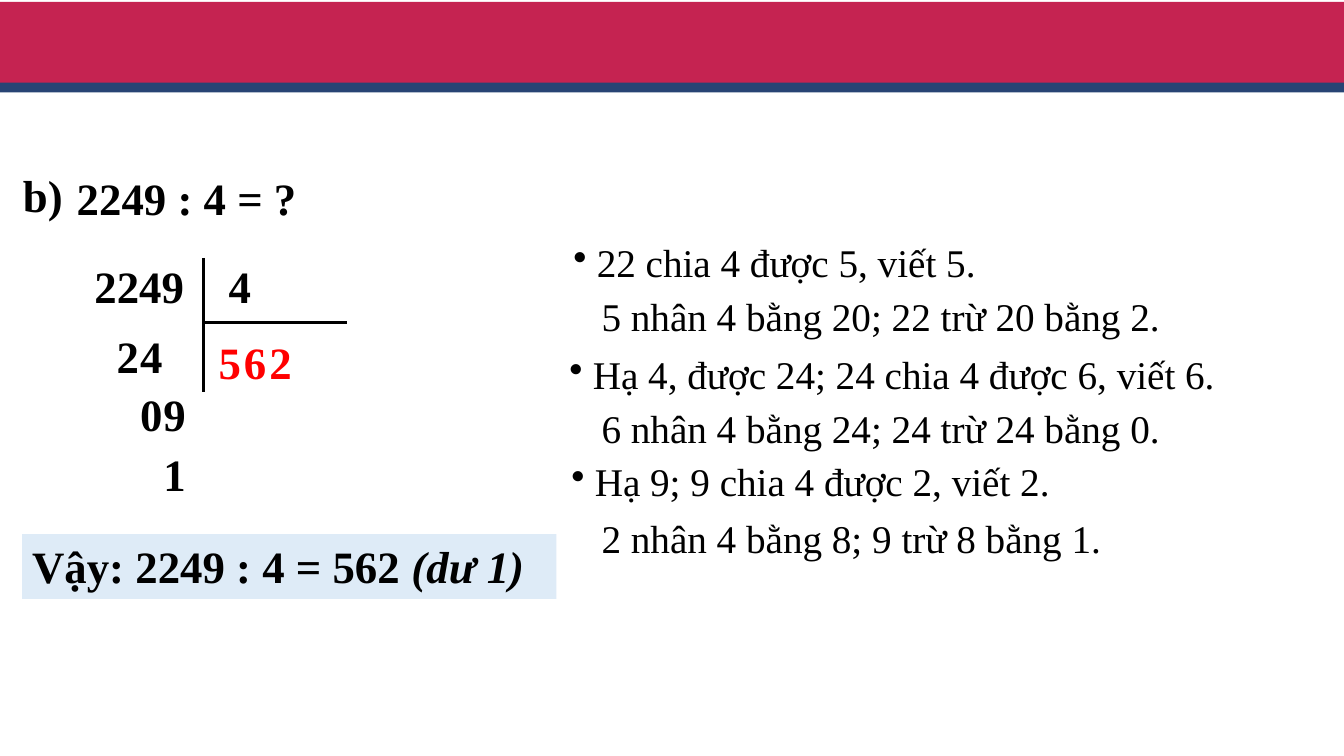
from pptx import Presentation
from pptx.dml.color import RGBColor
from pptx.enum.shapes import MSO_CONNECTOR, MSO_SHAPE
from pptx.enum.text import MSO_ANCHOR, MSO_AUTO_SIZE, PP_ALIGN
from pptx.oxml.ns import qn
from pptx.util import Cm, Pt
from lxml import etree

RECTANGLE = MSO_SHAPE.RECTANGLE
STRAIGHT = MSO_CONNECTOR.STRAIGHT
LEFT = PP_ALIGN.LEFT
TOP = MSO_ANCHOR.TOP
NO_FIT = MSO_AUTO_SIZE.NONE

FONT = "Times New Roman"
COLORS = {"red_band": "C52351", "blue_band": "274474", "panel": "DEEBF7",
          "text": "000000", "quotient": "FF0000"}

# Content
QUESTION = "2249 : 4 = ?"
LABEL = "b)"
DIVIDEND, DIVISOR, QUOTIENT = "2249", "4", "562"
# Digits brought down: text, column of the first digit, top in cm
REMAINDERS = [("24", 0, 8.17), ("09", 1, 9.61), ("1", 2, 11.13)]
CONCLUSION = [("Vậy: 2249 : 4 = 562 ", False), ("(dư 1)", True)]
# Explanation: text, has a bullet, left and top in cm
STEPS = [
    ("22 chia 4 được 5, viết 5.", True, 14.2, 5.89),
    ("5 nhân 4 bằng 20; 22 trừ 20 bằng 2.", False, 14.91, 7.24),
    ("Hạ 4, được 24; 24 chia 4 được 6, viết 6.", True, 14.1, 8.71),
    ("6 nhân 4 bằng 24; 24 trừ 24 bằng 0.", False, 14.91, 10.06),
    ("Hạ 9; 9 chia 4 được 2, viết 2.", True, 14.15, 11.4),
    ("2 nhân 4 bằng 8; 9 trừ 8 bằng 1.", False, 14.91, 12.83),
]

# Sizes in cm
SLIDE_WIDTH, SLIDE_HEIGHT = 33.87, 19.05
LINE_HEIGHT, STEP_HEIGHT = 1.63, 1.45
DIGIT_WIDTH = 1.2
REMAINDER_LEFT, REMAINDER_PITCH = 2.69, 0.59
QUOTIENT_LEFT, QUOTIENT_PITCH = 5.26, 0.64
CORNER_X, CORNER_Y = 5.13, 8.13

deck = Presentation()
deck.slide_width, deck.slide_height = Cm(SLIDE_WIDTH), Cm(SLIDE_HEIGHT)
page = deck.slides.add_slide(deck.slide_layouts[5])


def color(name):
    return RGBColor.from_string(COLORS[name])


def write(shape, spans, size=32, bold=True, ink="text", bullet=False):
    frame = shape.text_frame
    frame.word_wrap = True
    frame.auto_size = NO_FIT
    frame.vertical_anchor = TOP
    para = frame.paragraphs[0]
    para.alignment = LEFT
    if bullet:
        properties = para._p.get_or_add_pPr()
        properties.set("marL", str(Cm(0.59)))
        properties.set("indent", str(-Cm(0.59)))
        etree.SubElement(properties, qn("a:buChar")).set("char", "•")
    for text, italic in spans:
        span = para.add_run()
        span.text = text
        span.font.name = FONT
        span.font.size = Pt(size)
        span.font.bold = bold
        span.font.italic = italic
        span.font.color.rgb = color(ink)


def add_text(text, left, top, width, height=LINE_HEIGHT, **style):
    box = page.shapes.add_textbox(Cm(left), Cm(top), Cm(width), Cm(height))
    write(box, [(text, False)], **style)


def add_block(left, top, width, height, fill):
    block = page.shapes.add_shape(RECTANGLE, Cm(left), Cm(top), Cm(width), Cm(height))
    block.shadow.inherit = False
    block.fill.solid()
    block.fill.fore_color.rgb = color(fill)
    block.line.fill.background()
    return block


def add_line(x1, y1, x2, y2):
    line = page.shapes.add_connector(STRAIGHT, Cm(x1), Cm(y1), Cm(x2), Cm(y2))
    line.line.color.rgb = color("text")
    line.line.width = Pt(2.25)
    etree.SubElement(line._element.spPr, qn("a:effectLst"))


# Header bands
add_block(0, 0.05, SLIDE_WIDTH, 2.08, "red_band")
add_block(0, 2.08, SLIDE_WIDTH, 0.25, "blue_band")

# Question
title = page.shapes.title
title.left, title.top, title.width, title.height = Cm(1.68), Cm(4.17), Cm(10.67), Cm(LINE_HEIGHT)
write(title, [(QUESTION, False)])
add_text(LABEL, 0.33, 4.09, 1.7)

# Long division
add_text(DIVIDEND, 2.13, 6.4, 3)
add_text(DIVISOR, 5.51, 6.4, DIGIT_WIDTH)
for place, digit in enumerate(QUOTIENT):
    add_text(digit, QUOTIENT_LEFT + place * QUOTIENT_PITCH, 8.31, DIGIT_WIDTH, ink="quotient")
for digits, column, top in REMAINDERS:
    for place, digit in enumerate(digits, column):
        add_text(digit, REMAINDER_LEFT + place * REMAINDER_PITCH, top, DIGIT_WIDTH)
add_line(CORNER_X, 6.5, CORNER_X, 9.88)
add_line(CORNER_X, CORNER_Y, 8.74, CORNER_Y)

# Conclusion
write(add_block(0.56, 13.46, 13.46, LINE_HEIGHT, "panel"), CONCLUSION)

# Explanation
for text, bullet, left, top in STEPS:
    add_text(text, left, top, 18.5, STEP_HEIGHT, size=28, bold=False, bullet=bullet)

deck.save("out.pptx")
